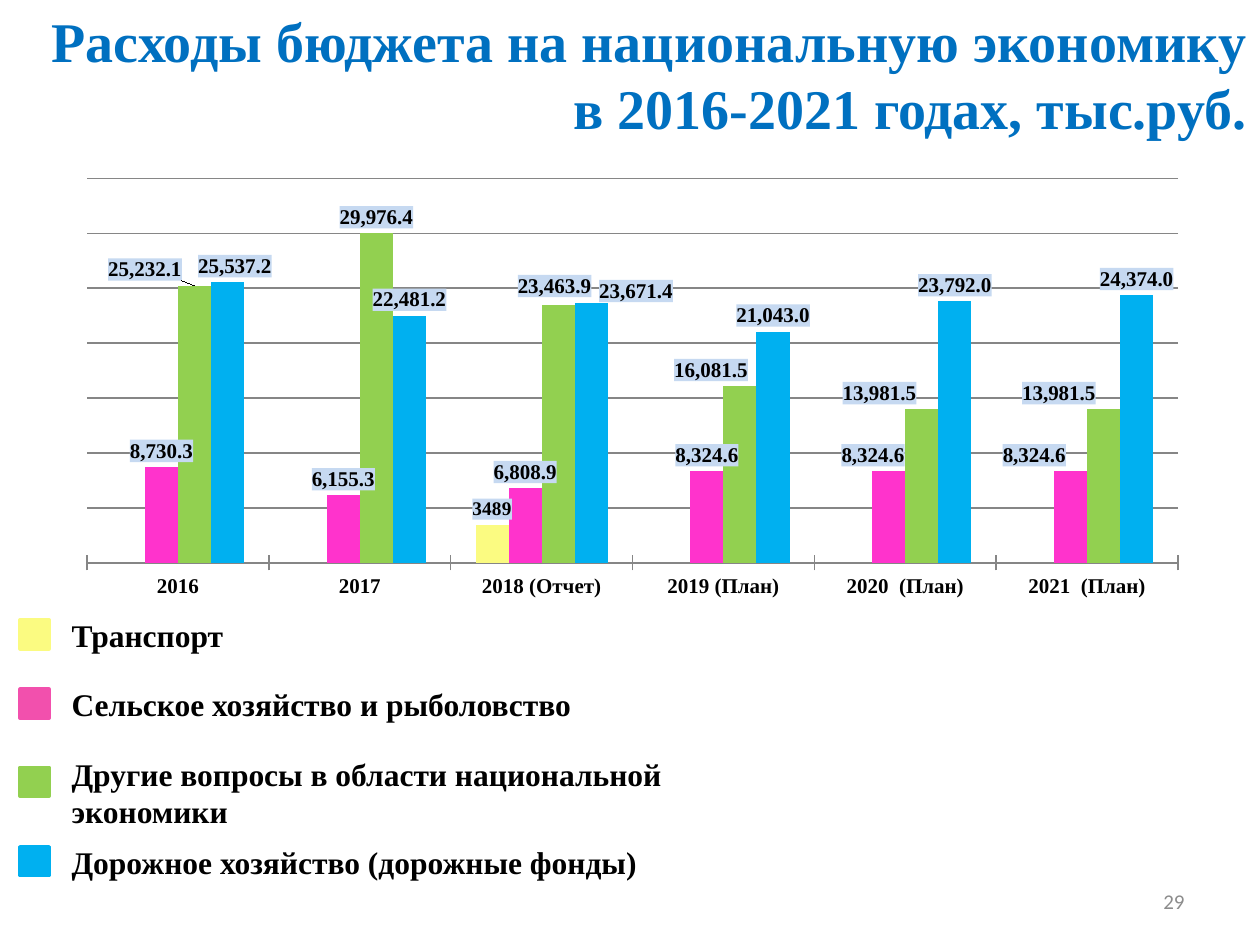
from copy import deepcopy
from typing import NamedTuple, Optional

from lxml.etree import SubElement
from pptx import Presentation
from pptx.chart.data import CategoryChartData
from pptx.dml.color import RGBColor
from pptx.enum.chart import XL_CHART_TYPE, XL_LABEL_POSITION, XL_TICK_MARK
from pptx.enum.shapes import MSO_SHAPE
from pptx.enum.text import MSO_ANCHOR, MSO_AUTO_SIZE, PP_ALIGN
from pptx.oxml import parse_xml
from pptx.oxml.ns import nsdecls, qn
from pptx.util import Inches, Pt

SERIF = "Times New Roman"
GREY = "868686"


class Series(NamedTuple):
    color: str
    values: tuple[Optional[float], ...]
    format: str
    size: int
    shifts: dict[int, tuple[float, float]]  # label offsets by point


class Key(NamedTuple):
    text: str
    color: str
    top: float
    mark: float
    height: float = 0.4


YEARS = ["2016", "2017", "2018 (Отчет)", "2019 (План)", "2020  (План)", "2021  (План)"]
NUMBER = "#,##0.0"
SERIES = [
    Series("FBFB81", (None, None, 3489, None, None, None), "General", 11, {}),
    Series("FF33CC", (8730.3, 6155.3, 6808.9, 8324.6, 8324.6, 8324.6), NUMBER, 12,
           {4: (-0.013, 0), 5: (-0.03, 0)}),
    Series("92D050", (25232.1, 29976.4, 23463.9, 16081.5, 13981.5, 13981.5), NUMBER, 12,
           {0: (-0.041, 0), 2: (-0.003, -0.007), 3: (-0.024, 0),
            4: (-0.035, 0), 5: (-0.037, 0)}),
    Series("00B0F0", (25537.2, 22481.2, 23671.4, 21043, 23792, 24374), NUMBER, 12,
           {0: (0.006, 0), 2: (0.037, 0.01)}),
]
KEYS = [
    Key("Транспорт", "FBFB81", 4.84, 4.92),
    Key("Сельское хозяйство и рыболовство", "F250AD", 5.39, 5.47),
    Key("Другие вопросы в области национальной экономики", "92D050", 5.94, 6.09, 0.71),
    Key("Дорожное хозяйство (дорожные фонды)", "00B0F0", 6.64, 6.72),
]


def rgb(color: str) -> RGBColor:
    return RGBColor.from_string(color)


def style(font, size: int, color: str = "000000", bold: bool = True, name: str = SERIF) -> None:
    font.name, font.size, font.bold = name, Pt(size), bold
    font.color.rgb = rgb(color)


def place(shape, left: float, top: float, width: float, height: float) -> None:
    shape.left, shape.top = Inches(left), Inches(top)
    shape.width, shape.height = Inches(width), Inches(height)


def layout(**parts):
    """Return a manual c:layout element."""
    node = parse_xml(f"<c:layout {nsdecls('c')}><c:manualLayout/></c:layout>")
    for tag, value in parts.items():
        SubElement(node[0], qn(f"c:{tag}")).set("val", str(value))
    return node


def add_labels(plot, series: Series) -> None:
    labels = plot.data_labels
    labels.show_value = True
    labels.position = XL_LABEL_POSITION.OUTSIDE_END
    labels.number_format, labels.number_format_is_linked = series.format, False
    style(labels.font, series.size)
    root = labels._element
    fill = parse_xml(
        f'<c:spPr {nsdecls("c", "a")}><a:solidFill><a:srgbClr val="C6D9F1"/>'
        "</a:solidFill></c:spPr>")
    root.find(qn("c:txPr")).addprevious(fill)
    looks = [root.find(qn(f"c:{tag}")) for tag in ("numFmt", "spPr", "txPr")]
    for index, (x, y) in series.shifts.items():
        plot.points[index].data_label.position = XL_LABEL_POSITION.OUTSIDE_END
        label = root.findall(qn("c:dLbl"))[-1]
        for tag in ("numFmt", "spPr", "txPr"):
            for old in label.findall(qn(f"c:{tag}")):
                label.remove(old)
        parts = [layout(x=x, y=y), *map(deepcopy, looks)]
        for spot, part in enumerate(parts, 1):
            label.insert(spot, part)


def add_chart(slide) -> None:
    data = CategoryChartData()
    data.categories = YEARS
    for count, series in enumerate(SERIES, 1):
        data.add_series(f"Series {count}", series.values)
    chart = slide.shapes.add_chart(
        XL_CHART_TYPE.COLUMN_CLUSTERED, Inches(0.23), Inches(1.41),
        Inches(9.61), Inches(3.44), data).chart
    chart.has_legend = chart.has_title = False
    style(chart.font, 18, bold=False, name="Calibri")

    plot = chart.plots[0]
    plot.gap_width, plot.overlap, plot.vary_by_categories = 150, 0, False
    for bars, series in zip(plot.series, SERIES):
        bars.format.fill.solid()
        bars.format.fill.fore_color.rgb = rgb(series.color)
        bars.invert_if_negative = False
        add_labels(bars, series)

    years = chart.category_axis
    style(years.tick_labels.font, 12)
    years.major_tick_mark = XL_TICK_MARK.CROSS
    scale = chart.value_axis
    scale.visible = False
    scale.minimum_scale, scale.maximum_scale, scale.major_unit = 0, 35000, 5000
    scale.has_major_gridlines = True
    for line in (years.format.line, scale.major_gridlines.format.line):
        line.color.rgb = rgb(GREY)
        line.width = Pt(0.75)

    area = chart._chartSpace.chart.plotArea
    for old in area.findall(qn("c:layout")):
        area.remove(old)
    area.insert(0, layout(layoutTarget="inner", xMode="edge", yMode="edge",
                          x=0.048, y=0, w=0.901, h=0.889))


def add_key(slide, key: Key) -> None:
    mark = slide.shapes.add_shape(MSO_SHAPE.RECTANGLE, 0, 0, 0, 0)
    place(mark, 0.16, key.mark, 0.23, 0.23)
    mark.shadow.inherit = False
    mark.fill.solid()
    mark.fill.fore_color.rgb = mark.line.color.rgb = rgb(key.color)
    mark.line.width = Pt(2)
    box = slide.shapes.add_textbox(0, 0, 0, 0)
    place(box, 0.47, key.top, 5, key.height)
    box.text_frame.word_wrap = True
    box.text_frame.text = key.text
    style(box.text_frame.paragraphs[0].runs[0].font, 18)


def add_title(slide) -> None:
    title = slide.shapes.title
    place(title, 0.21, 0, 9.79, 1.72)
    frame = title.text_frame
    frame.text = "Расходы бюджета на национальную экономику\nв 2016-2021 годах, тыс.руб."
    frame.auto_size, frame.word_wrap = MSO_AUTO_SIZE.NONE, False
    frame.vertical_anchor = MSO_ANCHOR.TOP
    for line in frame.paragraphs:
        line.alignment = PP_ALIGN.RIGHT
        style(line.runs[0].font, 32, "0070C0")


def add_number(slide) -> None:
    box = slide.shapes.add_textbox(0, 0, 0, 0)
    place(box, 7.17, 6.95, 2.33, 0.4)
    frame = box.text_frame
    frame.word_wrap = True
    frame.text = "29"
    frame.vertical_anchor = MSO_ANCHOR.MIDDLE
    frame.paragraphs[0].alignment = PP_ALIGN.RIGHT
    style(frame.paragraphs[0].runs[0].font, 12, "8C8C8C", False, "Calibri")


def main() -> None:
    deck = Presentation()
    deck.slide_width, deck.slide_height = Inches(10), Inches(7.5)
    slide = deck.slides.add_slide(deck.slide_layouts[5])
    add_title(slide)
    add_chart(slide)
    for key in KEYS:
        add_key(slide, key)
    add_number(slide)
    deck.save("out.pptx")


if __name__ == "__main__":
    main()
